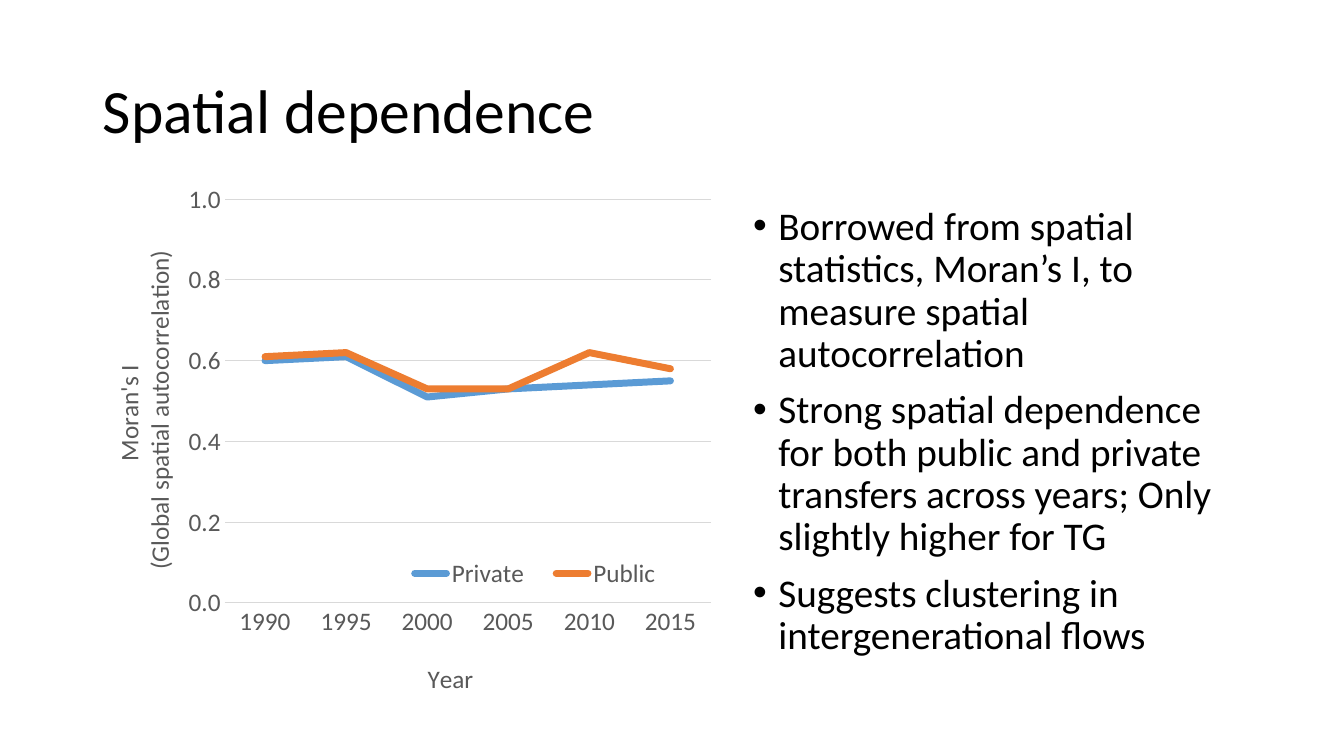
from lxml import etree
from pptx import Presentation
from pptx.chart.data import CategoryChartData
from pptx.dml.color import RGBColor
from pptx.enum.chart import XL_CHART_TYPE, XL_LEGEND_POSITION, XL_TICK_MARK
from pptx.enum.text import MSO_ANCHOR, MSO_AUTO_SIZE, PP_ALIGN
from pptx.oxml.ns import qn
from pptx.util import Inches, Pt

LINE = XL_CHART_TYPE.LINE
BOTTOM = XL_LEGEND_POSITION.BOTTOM
NO_TICK = XL_TICK_MARK.NONE
MIDDLE, TOP = MSO_ANCHOR.MIDDLE, MSO_ANCHOR.TOP
NO_FIT = MSO_AUTO_SIZE.NONE
LEFT = PP_ALIGN.LEFT

FONT = "Calibri"
COLORS = {"text": "000000", "label": "595959", "grid": "D9D9D9",
          "Private": "5B9BD5", "Public": "ED7D31"}
YEARS = ["1990", "1995", "2000", "2005", "2010", "2015"]
SERIES = {"Private": [0.6, 0.61, 0.51, 0.53, 0.54, 0.55],
          "Public": [0.61, 0.62, 0.53, 0.53, 0.62, 0.58]}
POINTS = [
    "Borrowed from spatial statistics, Moran’s I, to measure spatial autocorrelation",
    "Strong spatial dependence for both public and private transfers across years; "
    "Only slightly higher for TG",
    "Suggests clustering in intergenerational flows",
]


def color(name):
    return RGBColor.from_string(COLORS[name])


def style(font, size, name):
    font.name = FONT
    font.size = Pt(size)
    font.bold = False
    font.color.rgb = color(name)


def place(shape, box):
    shape.left, shape.top, shape.width, shape.height = (Inches(v) for v in box)


def add_run(para, text, size, name):
    run = para.add_run()
    run.text = text
    style(run.font, size, name)


def set_layout(parent, index, x, y, w=None, h=None, inner=False):
    """Place a chart part by fractions of the chart's size."""
    old = parent.find(qn("c:layout"))
    if old is not None:
        parent.remove(old)
    layout = etree.Element(qn("c:layout"))
    parent.insert(index, layout)
    manual = etree.SubElement(layout, qn("c:manualLayout"))
    items = [("xMode", "edge"), ("yMode", "edge"),
             ("x", x), ("y", y), ("w", w), ("h", h)]
    if inner:
        items.insert(0, ("layoutTarget", "inner"))
    for tag, value in items:
        if value is not None:
            etree.SubElement(manual, qn("c:" + tag)).set("val", str(value))


def add_title(slide, box, text):
    title = slide.shapes.title
    place(title, box)
    frame = title.text_frame
    frame.word_wrap = True
    frame.auto_size = NO_FIT
    frame.vertical_anchor = MIDDLE
    para = frame.paragraphs[0]
    para.alignment = LEFT
    para.line_spacing = 0.9
    add_run(para, text, 44, "text")


def add_points(slide, box, points):
    body = slide.placeholders[1]
    place(body, box)
    frame = body.text_frame
    frame.word_wrap = True
    frame.auto_size = NO_FIT
    frame.vertical_anchor = TOP
    for i, text in enumerate(points):
        para = frame.add_paragraph() if i else frame.paragraphs[0]
        para.line_spacing = 0.9
        para.space_before = Pt(10)
        props = para._p.get_or_add_pPr()
        props.set("marL", str(Inches(0.25)))
        props.set("indent", str(-Inches(0.25)))
        etree.SubElement(props, qn("a:buFont")).set("typeface", "Arial")
        etree.SubElement(props, qn("a:buChar")).set("char", "•")
        add_run(para, text, 28, "text")


def name_axis(axis, lines, x, y, turn=0):
    title = axis.axis_title
    frame = title.text_frame
    for i, text in enumerate(lines):
        para = frame.add_paragraph() if i else frame.paragraphs[0]
        add_run(para, text, 18, "label")
    frame._txBody.bodyPr.set("rot", str(turn * 60000))
    set_layout(title._element, 1, x, y)


def format_axis(axis):
    axis.major_tick_mark = axis.minor_tick_mark = NO_TICK
    style(axis.tick_labels.font, 18, "label")


def add_graph(slide, box):
    data = CategoryChartData(number_format="0.00")
    data.categories = YEARS
    for name, values in SERIES.items():
        data.add_series(name, values)
    chart = slide.shapes.add_chart(LINE, *(Inches(v) for v in box), data).chart
    chart.has_title = False
    style(chart.font, 18, "text")
    set_layout(chart.plots[0]._element.getparent(), 0, 0.22, 0.05, 0.76, 0.75, True)

    # Axes
    years, scale = chart.category_axis, chart.value_axis
    for axis in (years, scale):
        format_axis(axis)
    years.has_major_gridlines = False
    years.format.line.color.rgb = color("grid")
    years.format.line.width = Pt(0.75)
    name_axis(years, ["Year"], 0.53, 0.9)
    scale.minimum_scale, scale.maximum_scale, scale.major_unit = 0, 1, 0.2
    scale.tick_labels.number_format = "0.0"
    scale.tick_labels.number_format_is_linked = False
    scale.format.line.fill.background()
    grid = scale.major_gridlines.format.line
    grid.color.rgb = color("grid")
    grid.width = Pt(0.75)
    name_axis(scale, ["Moran's I ", "(Global spatial autocorrelation)"],
              0.04, 0.14, -90)

    # Lines
    chart.plots[0].vary_by_categories = False
    for series in chart.plots[0].series:
        series.smooth = False
        line = series.format.line
        line.color.rgb = color(series.name)
        line.width = Pt(5)
        line._get_or_add_ln().set("cap", "rnd")

    # Legend
    chart.has_legend = True
    legend = chart.legend
    legend.position = BOTTOM
    legend.include_in_layout = True
    style(legend.font, 18, "label")
    set_layout(legend._element, 1, 0.48, 0.71, 0.45, 0.07)


def main():
    deck = Presentation()
    deck.slide_width, deck.slide_height = Inches(13.33), Inches(7.5)
    slide = deck.slides.add_slide(deck.slide_layouts[1])
    add_title(slide, (0.92, 0.4, 11.5, 1.45), "Spatial dependence")
    add_points(slide, (7.37, 2, 5.05, 4.76), POINTS)
    add_graph(slide, (0.83, 1.71, 6.35, 5.34))
    deck.save("out.pptx")


if __name__ == "__main__":
    main()
